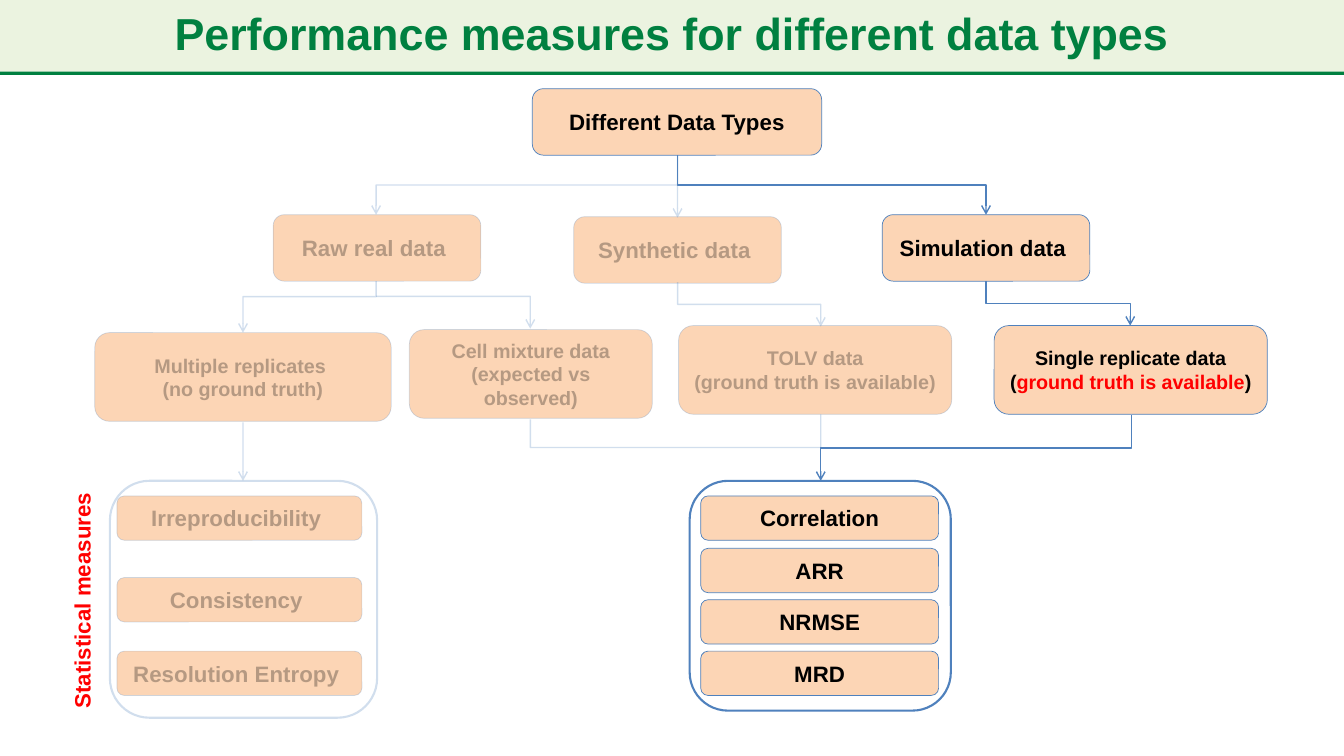
from typing import Any, NamedTuple

import pptx
import pptx.dml.color
import pptx.enum.shapes
import pptx.enum.text
import pptx.oxml.ns
import pptx.util
from lxml import etree

RGB = pptx.dml.color.RGBColor
GREEN = RGB(0x00, 0x80, 0x40)
PALE = RGB(0xEB, 0xF3, 0xE0)
PEACH = RGB(0xFC, 0xD5, 0xB5)
BLUE = RGB(0x4F, 0x81, 0xBD)
BLACK = RGB(0x00, 0x00, 0x00)
RED = RGB(0xFF, 0x00, 0x00)

PX = 9144  # 100 px to the inch
WIDE, HIGH = 1333, 750
BIG, SMALL = 15.9, 14.1

KIND = pptx.enum.shapes.MSO_CONNECTOR
ALIGN = pptx.enum.text.PP_ALIGN
ANCHOR = pptx.enum.text.MSO_ANCHOR
FIT = pptx.enum.text.MSO_AUTO_SIZE
qn = pptx.oxml.ns.qn


class Box(NamedTuple):
    text: str
    x: int
    y: int
    w: int
    h: int
    size: float = BIG
    faint: bool = True
    mark: str = ""


class Frame(NamedTuple):
    x: int
    y: int
    w: int
    h: int
    faint: bool


class Link(NamedTuple):
    x1: int
    y1: int
    x2: int
    y2: int
    faint: bool = True
    arrow: bool = True
    bend: float = 0.5
    corner: str = ""  # one-corner link: first leg "down" or "across"


BOXES = [
    Box("Different Data Types", 528, 88, 287, 66, faint=False),
    Box("Raw real data ", 271, 213, 206, 66),
    Box("Synthetic data ", 569, 215, 206, 66),
    Box("Simulation data ", 875, 213, 206, 66, faint=False),
    Box("Multiple replicates \n(no ground truth)", 94, 330, 294, 88, SMALL),
    Box("Cell mixture data\n(expected vs observed)", 406, 327, 241, 88, SMALL),
    Box("TOLV data\n(ground truth is available)", 673, 323, 271, 88, SMALL),
    Box("Single replicate data\n(ground truth is available)", 986, 323, 271, 88,
        SMALL, False, "ground truth is available"),
    Box("Irreproducibility ", 116, 492, 243, 44),
    Box("Consistency ", 116, 573, 243, 44),
    Box("Resolution Entropy ", 116, 646, 243, 44),
]
SCORES = ["Correlation", "ARR", "NRMSE", "MRD"]
BOXES += [Box(name, 695, 492 + 51 * i + (i > 0), 236, 44, faint=False)
          for i, name in enumerate(SCORES)]

FRAMES = [Frame(109, 477, 265, 235, True), Frame(684, 477, 259, 228, False)]

LINKS = [
    Link(241, 419, 241, 477),
    Link(672, 154, 373, 213),
    Link(672, 154, 978, 213, faint=False),
    Link(373, 279, 241, 330, bend=0.3),
    Link(373, 294, 526, 326, corner="across"),
    Link(978, 279, 1121, 323, faint=False),
    Link(672, 182, 672, 216),
    Link(672, 280, 814, 324),
    Link(1122, 412, 814, 477, faint=False),
    Link(526, 416, 814, 444, arrow=False, corner="down"),
    Link(814, 411, 814, 445, arrow=False),
]


def fade(node: Any, share: int) -> None:
    """Make every colour under the node see-through."""
    for tint in node.iter(qn("a:srgbClr")):
        etree.SubElement(tint, qn("a:alpha"), val=str(share * 1000))


def stroke(item: Any, color: RGB, width: float, faint: bool = False) -> None:
    item.line.color.rgb = color
    item.line.width = pptx.util.Pt(width)
    if faint:
        fade(item._element.spPr.find(qn("a:ln")), 25)


def write(shape: Any, text: str, *, size: float, color: RGB = BLACK,
          align: Any = ALIGN.CENTER, anchor: Any = ANCHOR.MIDDLE,
          faint: bool = False, mark: str = "", space: float = 1.0) -> None:
    """Fill the shape with bold text; the marked words are red."""
    frame = shape.text_frame
    frame.word_wrap = True
    frame.auto_size = FIT.NONE
    frame.vertical_anchor = anchor
    for i, row in enumerate(text.split("\n")):
        para = frame.add_paragraph() if i else frame.paragraphs[0]
        para.alignment = align
        para.line_spacing = space
        parts = row.partition(mark) if mark else (row,)
        for part in filter(None, parts):
            run = para.add_run()
            run.text = part
            run.font.name = "Arial"
            run.font.size = pptx.util.Pt(size)
            run.font.bold = True
            run.font.color.rgb = RED if part == mark else color
            if faint:
                fade(run._r, 28)


def panel(slide: Any, x: int, y: int, w: int, h: int) -> Any:
    shape = slide.shapes.add_shape(
        pptx.enum.shapes.MSO_SHAPE.ROUNDED_RECTANGLE,
        x * PX, y * PX, w * PX, h * PX)
    shape.shadow.inherit = False
    return shape


def draw_box(slide: Any, box: Box) -> None:
    shape = panel(slide, box.x, box.y, box.w, box.h)
    shape.fill.solid()
    shape.fill.fore_color.rgb = PEACH
    stroke(shape, BLUE, 0.5, box.faint)
    write(shape, box.text, size=box.size, faint=box.faint, mark=box.mark)


def draw_frame(slide: Any, frame: Frame) -> None:
    shape = panel(slide, frame.x, frame.y, frame.w, frame.h)
    shape.fill.background()
    stroke(shape, BLUE, 1.5, frame.faint)


def join(slide: Any, kind: Any, x1: float, y1: float, x2: float, y2: float) -> Any:
    """Add a connector without a shadow."""
    ends = [round(n * PX) for n in (x1, y1, x2, y2)]
    line = slide.shapes.add_connector(kind, *ends)
    etree.SubElement(line._element.spPr, qn("a:effectLst"))
    return line


def draw_link(slide: Any, link: Link) -> None:
    x1, y1, x2, y2 = link[:4]
    if x1 == x2:
        line = join(slide, KIND.STRAIGHT, x1, y1, x2, y2)
    elif link.corner == "across":
        line = join(slide, KIND.ELBOW, x1, y1, x2, y2)
    else:
        # An elbow starts sideways, so turn it about its centre to start down.
        long, deep = (y2 - y1) / 2, abs(x2 - x1) / 2
        midx, midy = (x1 + x2) / 2, (y1 + y2) / 2
        side = 1 if x2 < x1 else -1
        line = join(slide, KIND.ELBOW, midx - side * long, midy - deep,
                    midx + side * long, midy + deep)
        line._element.spPr.xfrm.set("rot", str(side * 90 % 360 * 60000))
    shape = line._element.spPr.find(qn("a:prstGeom"))
    if link.corner:
        shape.set("prst", "bentConnector2")
    elif link.bend != 0.5:
        etree.SubElement(shape.find(qn("a:avLst")), qn("a:gd"), name="adj1",
                         fmla=f"val {round(link.bend * 100000)}")
    stroke(line, BLUE, 1, link.faint)
    if link.arrow:
        etree.SubElement(line._element.spPr.find(qn("a:ln")),
                         qn("a:tailEnd"), type="arrow")


def draw_head(slide: Any) -> None:
    """Draw the rule, then the title band over its upper edge."""
    stroke(join(slide, KIND.STRAIGHT, 0, 72, WIDE, 72), GREEN, 3)
    title = slide.shapes.title
    title._element.getparent().append(title._element)
    title.left, title.top, title.width, title.height = 0, 0, WIDE * PX, 71 * PX
    title.fill.solid()
    title.fill.fore_color.rgb = PALE
    write(title, "Performance measures for different data types",
          size=32, color=GREEN, space=0.9)


def draw_side(slide: Any) -> None:
    side = slide.shapes.add_textbox(63 * PX, 470 * PX, 47 * PX, 243 * PX)
    write(side, "Statistical measures", size=BIG, color=RED,
          align=ALIGN.LEFT, anchor=ANCHOR.TOP)
    side.text_frame._txBody.bodyPr.set("vert", "vert270")


def main() -> None:
    deck = pptx.Presentation()
    deck.slide_width, deck.slide_height = WIDE * PX, HIGH * PX
    slide = deck.slides.add_slide(deck.slide_layouts.get_by_name("Title Only"))
    draw_head(slide)
    for box in BOXES:
        draw_box(slide, box)
    for frame in FRAMES:
        draw_frame(slide, frame)
    for link in LINKS:
        draw_link(slide, link)
    draw_side(slide)
    deck.save("out.pptx")


if __name__ == "__main__":
    main()
